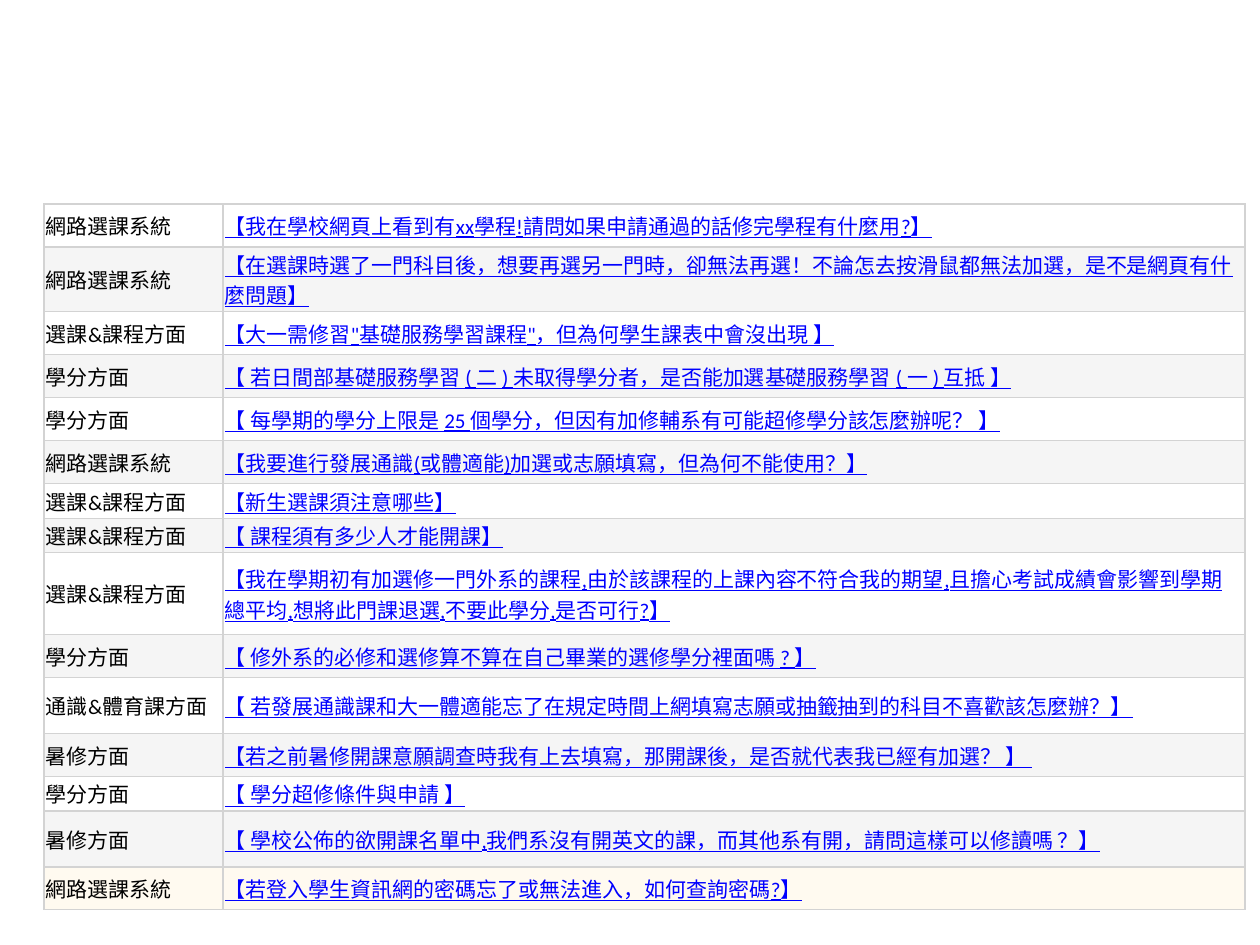
import pptx
import pptx.util
import pptx.dml.color
import pptx.enum.text
import pptx.oxml
import pptx.oxml.ns

PX = 914400 / 126  # EMU in one px
HEX = {"ink": "000000", "link": "0000FF", "rule": "D3D3D3",
       "white": "FFFFFF", "grey": "F5F5F5", "cream": "FFFAF0"}

# Topics of the questions
WEB, COURSE, CREDIT = "網路選課系統", "選課&課程方面", "學分方面"
SUMMER, GENERAL = "暑修方面", "通識&體育課方面"

# Row height in px, topic, question
ROWS = [
    (43, WEB, "【我在學校網頁上看到有xx學程!請問如果申請通過的話修完學程有什麼用?】"),
    (57, WEB, "【在選課時選了一門科目後，想要再選另一門時，卻無法再選！不論怎去按滑鼠都無法加選，是不是網頁有什麼問題】"),
    (43, COURSE, "【大一需修習\"基礎服務學習課程\"，但為何學生課表中會沒出現 】"),
    (43, CREDIT, "【 若日間部基礎服務學習 ( 二 ) 未取得學分者，是否能加選基礎服務學習 ( 一 ) 互抵 】"),
    (43, CREDIT, "【 每學期的學分上限是 25 個學分，但因有加修輔系有可能超修學分該怎麼辦呢？ 】"),
    (43, WEB, "【我要進行發展通識(或體適能)加選或志願填寫，但為何不能使用？】"),
    (30, COURSE, "【新生選課須注意哪些】"),
    (30, COURSE, "【 課程須有多少人才能開課】"),
    (82, COURSE, "【我在學期初有加選修一門外系的課程,由於該課程的上課內容不符合我的期望,且擔心考試成績會影響到學期總平均,想將此門課退選,不要此學分,是否可行?】"),
    (43, CREDIT, "【 修外系的必修和選修算不算在自己畢業的選修學分裡面嗎 ? 】"),
    (56, GENERAL, "【 若發展通識課和大一體適能忘了在規定時間上網填寫志願或抽籤抽到的科目不喜歡該怎麼辦？】"),
    (43, SUMMER, "【若之前暑修開課意願調查時我有上去填寫，那開課後，是否就代表我已經有加選？ 】 "),
    (30, CREDIT, "【 學分超修條件與申請 】"),
    (56, SUMMER, "【 學校公佈的欲開課名單中,我們系沒有開英文的課，而其他系有開，請問這樣可以修讀嗎 ？】"),
    (43, WEB, "【若登入學生資訊網的密碼忘了或無法進入，如何查詢密碼?】"),
]


def emu(px):
    return pptx.util.Emu(round(px * PX))


def color(name):
    return pptx.dml.color.RGBColor.from_string(HEX[name])


def write(frame, text, size=12, font="Calibri", ink="ink", under=False):
    run = frame.paragraphs[0].add_run()
    run.text = text
    run.font.size = pptx.util.Pt(size)
    run.font.name = font
    run.font.color.rgb = color(ink)
    run.font.underline = under


class Deck:
    def __init__(self, wide, high):
        self.file = pptx.Presentation()
        self.file.slide_width, self.file.slide_height = emu(wide), emu(high)
        self.slide = self.file.slides.add_slide(self.file.slide_layouts[6])
        self.inset = emu(2)
        self.rule = pptx.util.Pt(0.75)

    def edge(self, cell):
        props = cell._tc.get_or_add_tcPr()
        for side in ("lnL", "lnR", "lnT", "lnB"):
            props.append(pptx.oxml.parse_xml(
                f'<a:{side} {pptx.oxml.ns.nsdecls("a")} w="{self.rule}">'
                f'<a:solidFill><a:srgbClr val="{HEX["rule"]}"/></a:solidFill>'
                f'</a:{side}>'))

    def cell(self, cell, text, fill, **form):
        cell.margin_left = cell.margin_right = self.inset
        cell.margin_top = cell.margin_bottom = self.inset
        cell.vertical_anchor = pptx.enum.text.MSO_ANCHOR.MIDDLE
        self.edge(cell)
        cell.fill.solid()
        cell.fill.fore_color.rgb = color(fill)
        write(cell.text_frame, text, **form)

    def table(self, left, top, cols, rows):
        high = sum(row[0] for row in rows)
        grid = self.slide.shapes.add_table(
            len(rows), len(cols), emu(left), emu(top),
            emu(sum(cols)), emu(high)).table
        for col, wide in zip(grid.columns, cols):
            col.width = emu(wide)
        last = len(rows) - 1
        for i, (tall, topic, ask) in enumerate(rows):
            grid.rows[i].height = emu(tall)
            fill = "cream" if i == last else ("white", "grey")[i % 2]
            self.cell(grid.cell(i, 0), topic, fill)
            self.cell(grid.cell(i, 1), ask, fill, ink="link", under=True)


def main():
    deck = Deck(1260, 945)
    # Table of common questions
    deck.table(44, 204, (179, 1022), ROWS)
    deck.file.save("out.pptx")


if __name__ == "__main__":
    main()
